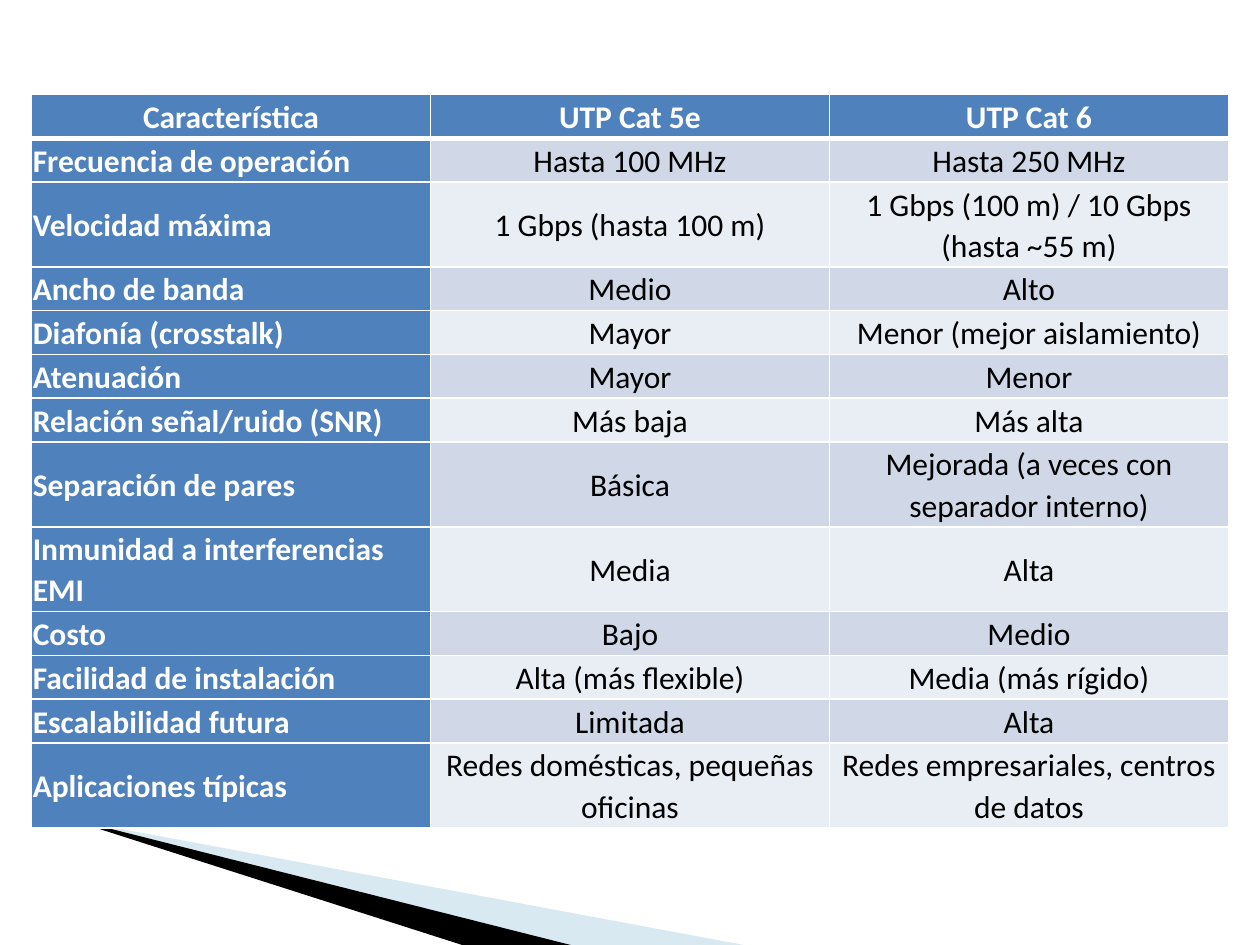
from dataclasses import dataclass
from typing import NamedTuple

from lxml.etree import SubElement
from pptx import Presentation
from pptx.dml.color import RGBColor as RGB
from pptx.enum.text import MSO_ANCHOR as Anchor, PP_ALIGN as Align
from pptx.oxml.ns import qn
from pptx.util import Pt


@dataclass(frozen=True)
class Theme:
    font: str = "Calibri"
    text_size: float = 18
    line_spacing: float = 1.07
    heading_fill: str = "4F81BD"
    heading_text: str = "FFFFFF"
    body_text: str = "000000"
    bands: tuple[str, str] = ("D0D8E8", "E9EDF4")
    grid: str = "FFFFFF"
    grid_width: float = 1
    header_rule_width: float = 3
    pale_wedge: str = "9FCADC"
    pale_opacity: int = 40
    dark_wedge: str = "000000"


class Feature(NamedTuple):
    name: str
    cat5e: str
    cat6: str


class Wedge(NamedTuple):
    outlines: list[list[tuple[float, float]]]
    fill: str
    opacity: int = 100


THEME = Theme()
BORDERS = ("lnL", "lnR", "lnT", "lnB")
COLUMN_WIDTH = 228
ROW_HEIGHT = 19.5
CELL_INSET = 0.75

FEATURES = [
    Feature("Característica", "UTP Cat 5e", "UTP Cat 6"),
    Feature("Frecuencia de operación", "Hasta 100 MHz", "Hasta 250 MHz"),
    Feature("Velocidad máxima", "1 Gbps (hasta 100 m)",
            "1 Gbps (100 m) / 10 Gbps (hasta ~55 m)"),
    Feature("Ancho de banda", "Medio", "Alto"),
    Feature("Diafonía (crosstalk)", "Mayor", "Menor (mejor aislamiento)"),
    Feature("Atenuación", "Mayor", "Menor"),
    Feature("Relación señal/ruido (SNR)", "Más baja", "Más alta"),
    Feature("Separación de pares", "Básica",
            "Mejorada (a veces con separador interno)"),
    Feature("Inmunidad a interferencias EMI", "Media", "Alta"),
    Feature("Costo", "Bajo", "Medio"),
    Feature("Facilidad de instalación", "Alta (más flexible)",
            "Media (más rígido)"),
    Feature("Escalabilidad futura", "Limitada", "Alta"),
    Feature("Aplicaciones típicas", "Redes domésticas, pequeñas oficinas",
            "Redes empresariales, centros de datos"),
]

WEDGES = [
    Wedge([[(46, 469.4), (325.5, 540), (425, 540)],
           [(39.6, 468), (39.6, 468.7), (46, 469.4)]],
          THEME.pale_wedge, THEME.pale_opacity),
    Wedge([[(38.2, 467.3), (38.9, 468), (264.2, 540), (326.2, 540)]],
          THEME.dark_wedge),
]


def draw_wedge(slide, wedge: Wedge) -> None:
    first, *others = [[(Pt(x), Pt(y)) for x, y in outline]
                      for outline in wedge.outlines]
    builder = slide.shapes.build_freeform(*first[0])
    builder.add_line_segments(first[1:], close=True)
    for outline in others:
        builder.move_to(*outline[0])
        builder.add_line_segments(outline[1:], close=True)
    shape = builder.convert_to_shape()
    shape.shadow.inherit = False
    shape.line.fill.background()
    shape.fill.solid()
    shape.fill.fore_color.rgb = RGB.from_string(wedge.fill)
    if wedge.opacity < 100:
        color = shape.fill._xPr.find(f"{qn('a:solidFill')}/{qn('a:srgbClr')}")
        SubElement(color, qn("a:alpha"), val=str(wedge.opacity * 1000))


def draw_borders(cell, bottom_width: float, top_width: float) -> None:
    """Add the cell's lines; must run before its fill is set."""
    properties = cell._tc.get_or_add_tcPr()
    widths = {"lnT": top_width, "lnB": bottom_width}
    for side in BORDERS:
        width = widths.get(side, THEME.grid_width)
        line = SubElement(properties, qn(f"a:{side}"), w=str(int(Pt(width))))
        SubElement(SubElement(line, qn("a:solidFill")), qn("a:srgbClr"),
                   val=THEME.grid)


def fill_cell(cell, text: str, row: int, column: int) -> None:
    is_heading = row == 0 or column == 0
    draw_borders(
        cell,
        bottom_width=THEME.header_rule_width if row == 0 else THEME.grid_width,
        top_width=THEME.header_rule_width if row == 1 else THEME.grid_width)
    cell.fill.solid()
    cell.fill.fore_color.rgb = RGB.from_string(
        THEME.heading_fill if is_heading else THEME.bands[(row - 1) % 2])
    cell.vertical_anchor = Anchor.MIDDLE
    cell.margin_left = cell.margin_right = Pt(CELL_INSET)
    cell.margin_top = cell.margin_bottom = Pt(CELL_INSET)

    paragraph = cell.text_frame.paragraphs[0]
    paragraph.text = text
    paragraph.alignment = Align.LEFT if row and column == 0 else Align.CENTER
    paragraph.line_spacing = THEME.line_spacing
    font = paragraph.runs[0].font
    font.name, font.size, font.bold = THEME.font, Pt(THEME.text_size), is_heading
    font.color.rgb = RGB.from_string(
        THEME.heading_text if is_heading else THEME.body_text)


def draw_comparison(slide, features: list[Feature]) -> None:
    columns = len(Feature._fields)
    comparison = slide.shapes.add_table(
        len(features), columns, Pt(18), Pt(54),
        Pt(COLUMN_WIDTH * columns), Pt(ROW_HEIGHT * len(features))).table
    for row, feature in enumerate(features):
        for column, text in enumerate(feature):
            fill_cell(comparison.cell(row, column), text, row, column)


def main() -> None:
    deck = Presentation()
    deck.slide_width, deck.slide_height = Pt(720), Pt(540)
    slide = deck.slides.add_slide(deck.slide_layouts[6])
    for wedge in WEDGES:
        draw_wedge(slide, wedge)
    draw_comparison(slide, FEATURES)
    deck.save("out.pptx")


if __name__ == "__main__":
    main()
